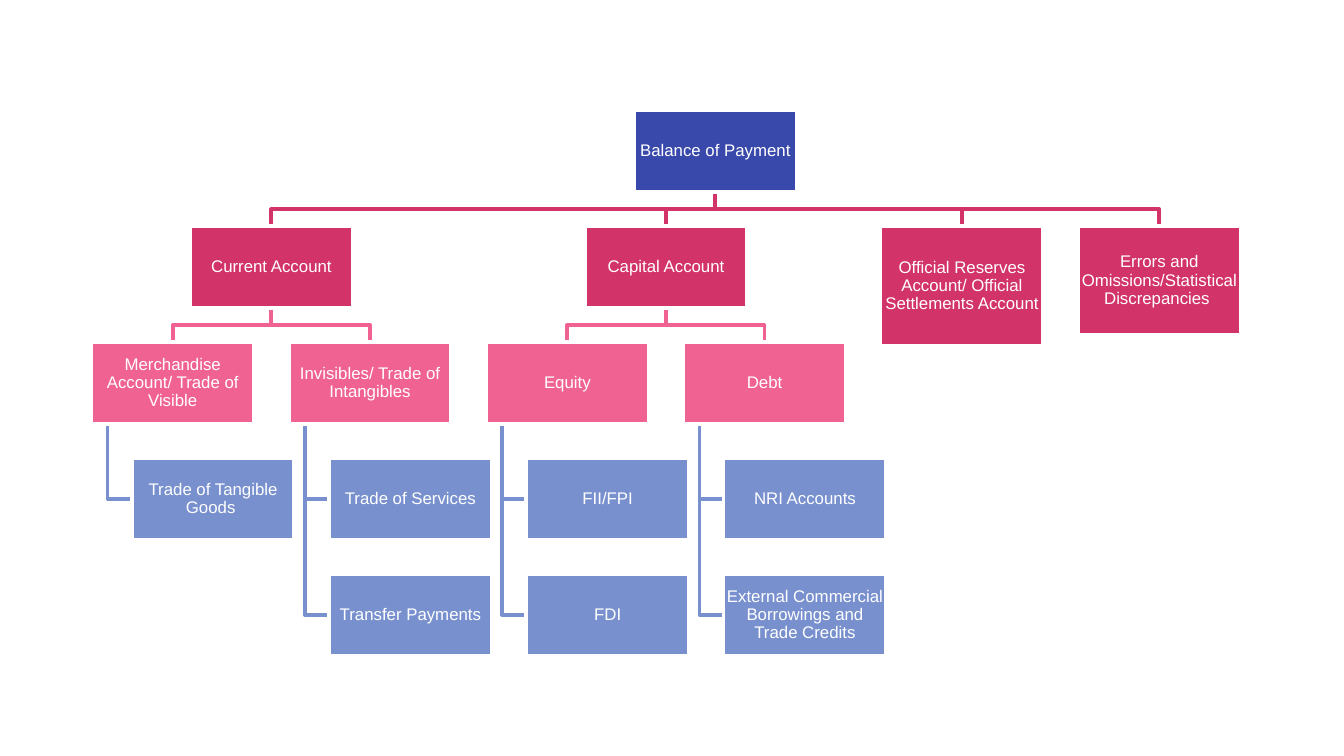
from dataclasses import dataclass

from pptx import Presentation
from pptx.dml.color import RGBColor
from pptx.enum.shapes import MSO_SHAPE as Shape
from pptx.enum.text import MSO_ANCHOR as Anchor, PP_ALIGN as Align
from pptx.util import Inches, Pt

WHITE = RGBColor(0xFF, 0xFF, 0xFF)
INDIGO = RGBColor(0x39, 0x49, 0xAB)
CRIMSON = RGBColor(0xD2, 0x33, 0x69)
PINK = RGBColor(0xF0, 0x62, 0x92)
BLUE = RGBColor(0x78, 0x90, 0xCD)

SLIDE_WIDTH = Inches(10)
SLIDE_HEIGHT = SLIDE_WIDTH * 9 // 16

# Grid of the chart, in inches: six columns and five rows
LEFT, LAST_LEFT = 0.68, 8.02
TOP, LAST_TOP = 0.82, 4.27
COLUMN_STEP = (LAST_LEFT - LEFT) / 5
ROW_STEP = (LAST_TOP - TOP) / 4
BOX_WIDTH, BOX_HEIGHT = 1.21, 0.61
LEAF_INDENT, TRUNK_INDENT = 0.3, 0.12

LINE_WIDTH = Pt(2)
FRAME_FORMAT = dict(
    word_wrap=True, vertical_anchor=Anchor.MIDDLE,
    margin_left=Inches(0.01), margin_right=Inches(0.01),
    margin_top=Inches(0.01), margin_bottom=Inches(0.01),
)
FONT_FORMAT = dict(name="Arial", size=Pt(9))

Point = tuple[float, float]


@dataclass(frozen=True)
class Account:
    text: str
    column: float
    row: int
    color: RGBColor
    children: tuple["Account", ...] = ()
    height: float = BOX_HEIGHT
    is_leaf: bool = False

    @property
    def left(self) -> float:
        return LEFT + self.column * COLUMN_STEP + (LEAF_INDENT if self.is_leaf else 0)

    @property
    def top(self) -> float:
        return TOP + self.row * ROW_STEP

    @property
    def center(self) -> float:
        return self.left + BOX_WIDTH / 2

    @property
    def bottom(self) -> float:
        return self.top + self.height


def group(text: str, column: int, *leaf_texts: str) -> Account:
    """Third-level account with its leaves stacked below it."""
    leaves = tuple(Account(leaf_text, column, row, BLUE, is_leaf=True)
                   for row, leaf_text in enumerate(leaf_texts, 3))
    return Account(text, column, 2, PINK, leaves)


CURRENT = Account("Current Account", 0.5, 1, CRIMSON, (
    group("Merchandise Account/ Trade of Visible", 0, "Trade of Tangible Goods "),
    group("Invisibles/ Trade of Intangibles", 1, "Trade of Services", "Transfer Payments"),
))
CAPITAL = Account("Capital Account", 2.5, 1, CRIMSON, (
    group("Equity", 2, "FII/FPI", "FDI"),
    group("Debt", 3, "NRI Accounts", "External Commercial Borrowings and Trade Credits"),
))
RESERVES = Account("Official Reserves Account/ Official Settlements Account",
                   4, 1, CRIMSON, height=0.89)
ERRORS = Account("Errors and Omissions/Statistical Discrepancies ",
                 5, 1, CRIMSON, height=0.81)
BALANCE = Account("Balance of Payment", 2.75, 0, INDIGO,
                  (CURRENT, CAPITAL, RESERVES, ERRORS))


def set_format(target, values: dict) -> None:
    for name, value in values.items():
        setattr(target, name, value)


def link_points(parent: Account, child: Account) -> list[Point]:
    if child.is_leaf:
        trunk = parent.left + TRUNK_INDENT
        middle = child.top + child.height / 2
        return [(trunk, parent.bottom), (trunk, middle), (child.left, middle)]
    middle = (parent.bottom + child.top) / 2
    return [(parent.center, parent.bottom), (parent.center, middle),
            (child.center, middle), (child.center, child.top)]


def draw_links(slide, parent: Account) -> None:
    for child in parent.children:
        draw_links(slide, child)
        start, *others = [(Inches(x), Inches(y)) for x, y in link_points(parent, child)]
        builder = slide.shapes.build_freeform(*start)
        builder.add_line_segments(others, close=False)
        link = builder.convert_to_shape()
        link.shadow.inherit = False
        link.fill.background()
        link.line.color.rgb = child.color
        link.line.width = LINE_WIDTH


def draw_boxes(slide, account: Account) -> None:
    box = slide.shapes.add_shape(
        Shape.RECTANGLE, Inches(account.left), Inches(account.top),
        Inches(BOX_WIDTH), Inches(account.height))
    box.shadow.inherit = False
    box.fill.solid()
    box.fill.fore_color.rgb = account.color
    box.line.color.rgb = WHITE
    box.line.width = LINE_WIDTH

    set_format(box.text_frame, FRAME_FORMAT)
    paragraph = box.text_frame.paragraphs[0]
    set_format(paragraph, dict(alignment=Align.CENTER, line_spacing=0.9))
    run = paragraph.add_run()
    run.text = account.text
    set_format(run.font, FONT_FORMAT)
    run.font.color.rgb = WHITE

    for child in account.children:
        draw_boxes(slide, child)


def main() -> None:
    presentation = Presentation()
    presentation.slide_width, presentation.slide_height = SLIDE_WIDTH, SLIDE_HEIGHT
    slide = presentation.slides.add_slide(presentation.slide_layouts[6])
    draw_links(slide, BALANCE)
    draw_boxes(slide, BALANCE)
    presentation.save("out.pptx")


if __name__ == "__main__":
    main()
